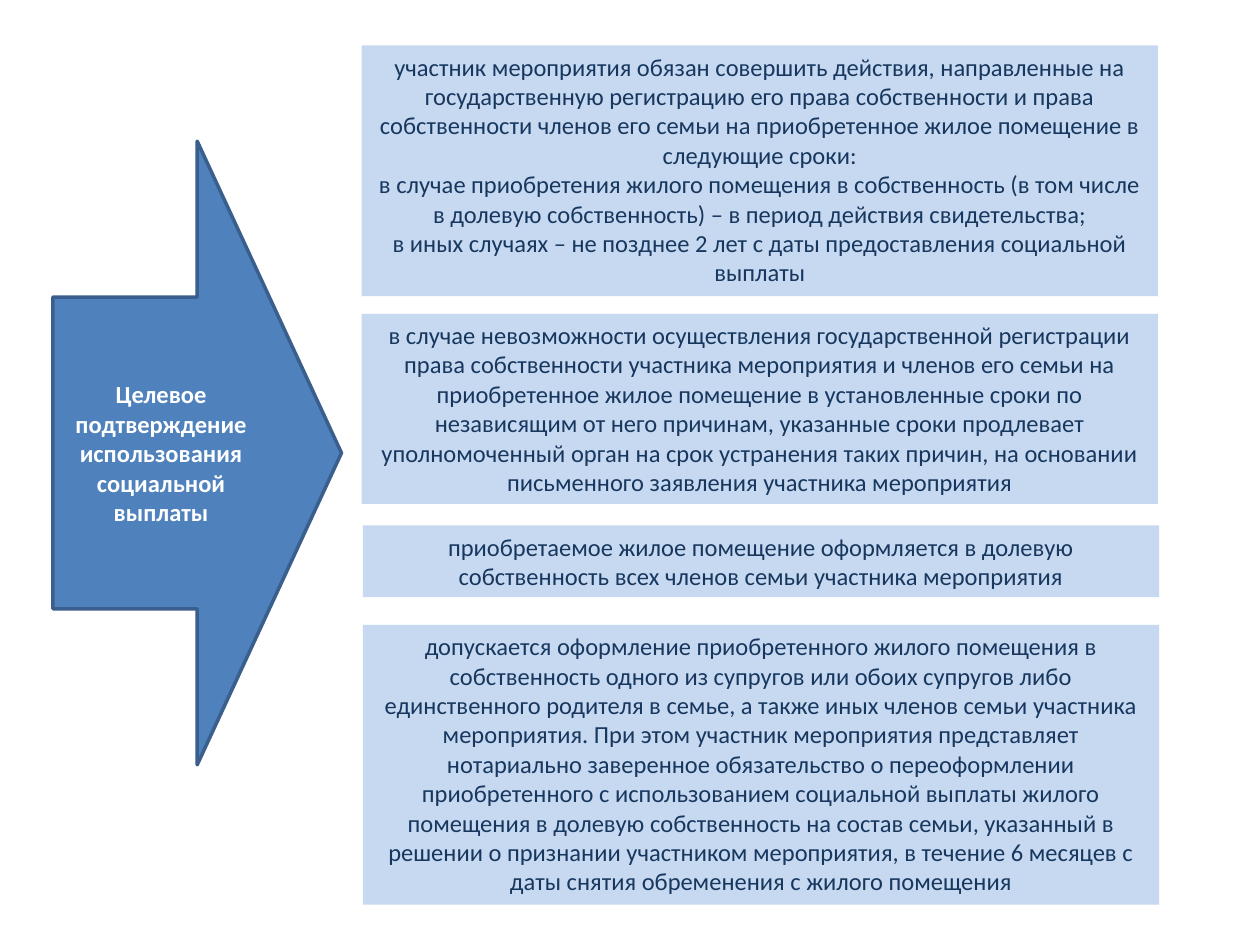
from dataclasses import dataclass

from pptx import Presentation
from pptx.dml.color import RGBColor
from pptx.enum.shapes import MSO_SHAPE
from pptx.enum.text import MSO_ANCHOR, MSO_AUTO_SIZE, PP_ALIGN
from pptx.util import Inches, Pt


@dataclass(frozen=True)
class Theme:
    font: str = "Calibri"
    size: int = 14
    panel: str = "C6D9F1"
    ink: str = "17375E"
    arrow: str = "4F81BD"
    outline: str = "3A5F8C"
    light: str = "FFFFFF"
    line: int = 2


THEME = Theme()

HEADING = "Целевое подтверждение использования социальной выплаты"

PANELS = [
    (2.87, 0.36, 1.99, [
        "участник мероприятия обязан совершить действия, направленные на "
        "государственную регистрацию его права собственности и права "
        "собственности членов его семьи на приобретенное жилое помещение в "
        "следующие сроки:",
        "в случае приобретения жилого помещения в собственность (в том числе "
        "в долевую собственность) – в период действия свидетельства;",
        "в иных случаях – не позднее 2 лет с даты предоставления социальной "
        "выплаты",
    ]),
    (2.87, 2.49, 1.51, [
        "в случае невозможности осуществления государственной регистрации "
        "права собственности участника мероприятия и членов его семьи на "
        "приобретенное жилое помещение в установленные сроки по "
        "независящим от него причинам, указанные сроки продлевает "
        "уполномоченный орган на срок устранения таких причин, на основании "
        "письменного заявления участника мероприятия",
    ]),
    (2.88, 4.17, 0.57, [
        "приобретаемое жилое помещение оформляется в долевую "
        "собственность всех членов семьи участника мероприятия",
    ]),
    (2.88, 4.96, 2.22, [
        "допускается оформление приобретенного жилого помещения в "
        "собственность одного из супругов или обоих супругов либо "
        "единственного родителя в семье, а также иных членов семьи участника "
        "мероприятия. При этом участник мероприятия представляет "
        "нотариально заверенное обязательство о переоформлении "
        "приобретенного с использованием социальной выплаты жилого "
        "помещения в долевую собственность на состав семьи, указанный в "
        "решении о признании участником мероприятия, в течение 6 месяцев с "
        "даты снятия обременения с жилого помещения",
    ]),
]
PANEL_WIDTH = 6.32


def add_filled(s, kind, box, fill):
    sp = s.shapes.add_shape(kind, *(Inches(v) for v in box))
    sp.shadow.inherit = False
    sp.fill.solid()
    sp.fill.fore_color.rgb = RGBColor.from_string(fill)
    return sp


def write(sp, paragraphs, color, anchor, bold=False):
    tf = sp.text_frame
    tf.word_wrap = True
    tf.vertical_anchor = anchor
    for i, text in enumerate(paragraphs):
        p = tf.add_paragraph() if i else tf.paragraphs[0]
        p.alignment = PP_ALIGN.CENTER
        r = p.add_run()
        r.text = text
        r.font.name = THEME.font
        r.font.size = Pt(THEME.size)
        r.font.bold = bold
        r.font.color.rgb = RGBColor.from_string(color)


def add_heading_arrow(s, box):
    sp = add_filled(s, MSO_SHAPE.RIGHT_ARROW, box, THEME.arrow)
    sp.line.color.rgb = RGBColor.from_string(THEME.outline)
    sp.line.width = Pt(THEME.line)
    write(sp, [HEADING], THEME.light, MSO_ANCHOR.MIDDLE, bold=True)


def add_panel(s, box, paragraphs):
    sp = add_filled(s, MSO_SHAPE.RECTANGLE, box, THEME.panel)
    sp.line.fill.background()
    write(sp, paragraphs, THEME.ink, MSO_ANCHOR.TOP)
    sp.text_frame.auto_size = MSO_AUTO_SIZE.SHAPE_TO_FIT_TEXT


def main():
    prs = Presentation()
    prs.slide_width, prs.slide_height = Inches(10), Inches(7.5)
    s = prs.slides.add_slide(prs.slide_layouts[6])
    add_heading_arrow(s, (0.42, 1.12, 2.29, 4.95))
    for left, top, height, paragraphs in PANELS:
        add_panel(s, (left, top, PANEL_WIDTH, height), paragraphs)
    prs.save("out.pptx")


if __name__ == "__main__":
    main()
